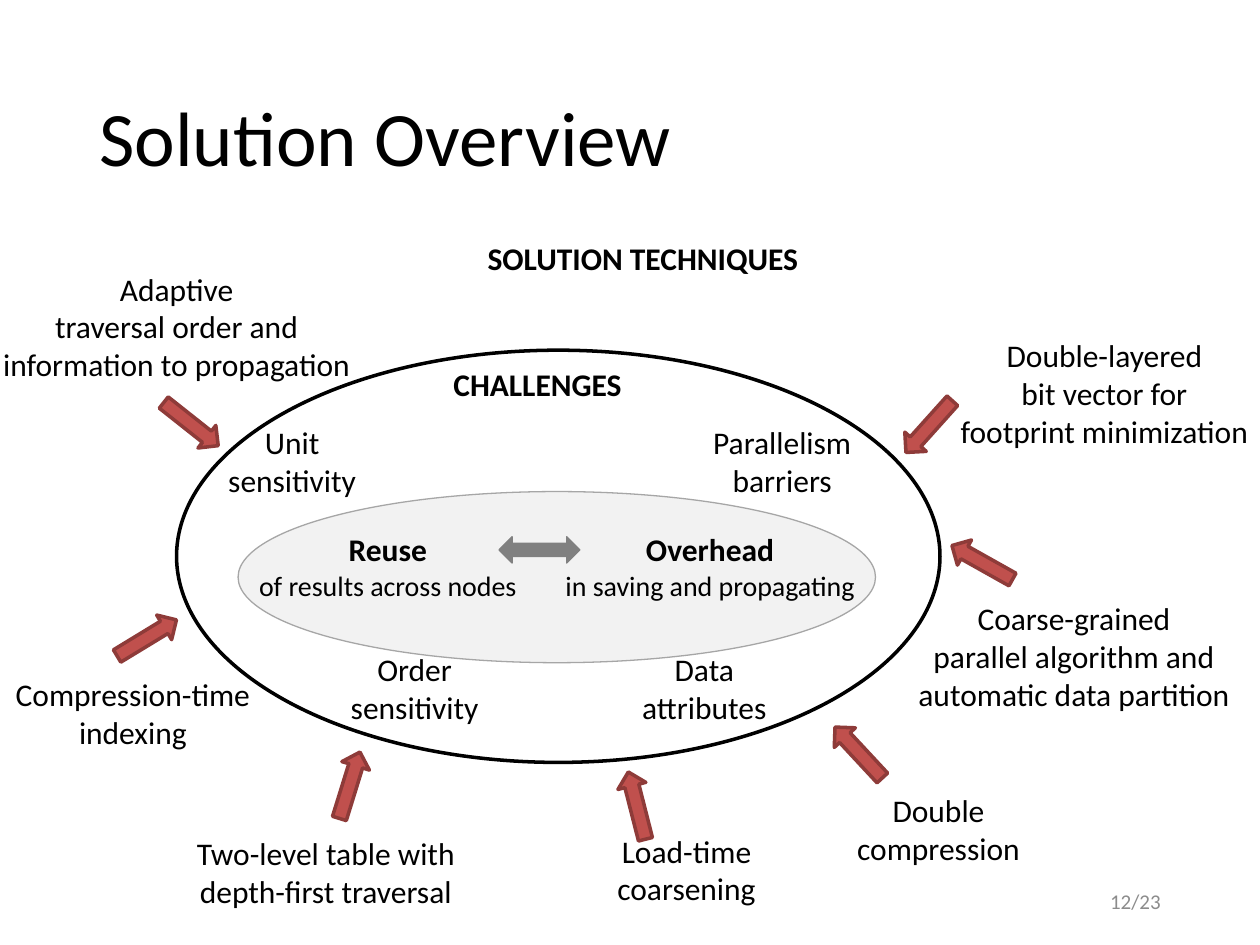
import pptx
import pptx.util
import pptx.dml.color
import pptx.enum.shapes
import pptx.enum.text

Cm = pptx.util.Cm
Pt = pptx.util.Pt
RGBColor = pptx.dml.color.RGBColor
Shape = pptx.enum.shapes.MSO_SHAPE
Align = pptx.enum.text.PP_ALIGN
Anchor = pptx.enum.text.MSO_ANCHOR

BLACK = RGBColor(0x00, 0x00, 0x00)
PALE_GRAY = RGBColor(0xF2, 0xF2, 0xF2)
LINE_GRAY = RGBColor(0xA6, 0xA6, 0xA6)
ARROW_GRAY = RGBColor(0x80, 0x80, 0x80)
NUMBER_GRAY = RGBColor(0x8C, 0x8C, 0x8C)
RED = RGBColor(0xC0, 0x50, 0x4D)
DARK_RED = RGBColor(0x8E, 0x3B, 0x39)
FONT = "Calibri"

deck = pptx.Presentation()
deck.slide_width = Cm(25.4)
deck.slide_height = Cm(19.05)
page = deck.slides.add_slide(deck.slide_layouts[5])


def add_text(text, left, top, width, size=18, bold=False, color=BLACK,
             align=Align.CENTER, anchor=Anchor.TOP):
    lines = text.split("\n")
    height = 0.25 + 0.77 * len(lines)
    box = page.shapes.add_textbox(Cm(left), Cm(top), Cm(width), Cm(height))
    frame = box.text_frame
    frame.word_wrap = True
    frame.vertical_anchor = anchor
    for number, line in enumerate(lines):
        para = frame.add_paragraph() if number else frame.paragraphs[0]
        para.alignment = align
        span = para.add_run()
        span.text = line
        span.font.name = FONT
        span.font.size = Pt(size)
        span.font.bold = bold
        span.font.color.rgb = color
    return frame


def add_figure(kind, left, top, width, height, fill=None, line=BLACK, weight=2, turn=0):
    figure = page.shapes.add_shape(kind, Cm(left), Cm(top), Cm(width), Cm(height))
    figure.shadow.inherit = False
    figure.rotation = turn
    if fill is None:
        figure.fill.background()
    else:
        figure.fill.solid()
        figure.fill.fore_color.rgb = fill
    figure.line.color.rgb = line
    figure.line.width = Pt(weight)


title = page.shapes.title
title.left, title.top, title.width, title.height = Cm(1.75), Cm(1.02), Cm(21.89), Cm(3.68)
title.text_frame.vertical_anchor = Anchor.MIDDLE
para = title.text_frame.paragraphs[0]
para.alignment = Align.LEFT
para.line_spacing = 0.9
span = para.add_run()
span.text = "Solution Overview"
span.font.name = FONT
span.font.size = Pt(44)
span.font.color.rgb = BLACK

add_figure(Shape.OVAL, 4.8, 9.91, 12.85, 3.45, fill=PALE_GRAY, line=LINE_GRAY, weight=0.75)
add_figure(Shape.OVAL, 3.56, 7.06, 15.39, 8.31)
add_figure(Shape.LEFT_RIGHT_ARROW, 10.06, 10.82, 1.63, 0.53,
           fill=ARROW_GRAY, line=ARROW_GRAY, weight=0.75)

add_text("SOLUTION TECHNIQUES", 9.58, 4.7, 8.89, bold=True, align=Align.LEFT)
add_text("CHALLENGES", 8.89, 7.24, 5.31, bold=True, align=Align.LEFT)

techniques = [
    ("Adaptive\ntraversal order and\ninformation to propagation", -0.3, 5.31, 7.72),
    ("Compression-time\nindexing", 0, 13.49, 5.36),
    ("Two-level table with\ndepth-first traversal", 2.67, 16.69, 7.8),
    ("Load-time\ncoarsening", 11.48, 16.64, 4.72),
    ("Double\ncompression", 16.56, 15.82, 4.72),
    ("Coarse-grained\nparallel algorithm and\nautomatic data partition", 17.98, 11.96, 7.34),
    ("Double-layered\nbit vector for\nfootprint minimization", 18.8, 6.65, 6.93),
]
challenges = [
    ("Unit\nsensitivity", 3.96, 8.41, 3.86),
    ("Parallelism\nbarriers", 13.84, 8.41, 3.86),
    ("Order\nsensitivity", 6.43, 12.98, 3.86),
    ("Data\nattributes", 12.27, 12.98, 3.86),
]
for text, left, top, width in techniques + challenges:
    add_text(text, left, top, width)

goals = [
    ("Reuse\nof results across nodes", 4.85, 5.94),
    ("Overhead\nin saving and propagating", 10.85, 6.93),
]
for text, left, width in goals:
    frame = add_text(text, left, 10.57, width, size=16)
    heading = frame.paragraphs[0].runs[0].font
    heading.size = Pt(18)
    heading.bold = True

technique_arrows = [
    (3.15, 8.26, 38.4),
    (2.26, 12.57, 328.7),
    (6.35, 15.54, 287.2),
    (12.14, 15.95, 255.7),
    (16.61, 14.88, 227.1),
    (19.1, 11.05, 209.3),
    (18.03, 8.31, 131.9),
]
for left, top, turn in technique_arrows:
    add_figure(Shape.RIGHT_ARROW, left, top, 1.4, 0.58, fill=RED, line=DARK_RED, turn=turn)

add_text("12/23", 17.93, 17.65, 5.72, size=12, color=NUMBER_GRAY,
         align=Align.RIGHT, anchor=Anchor.MIDDLE)

deck.save("out.pptx")
